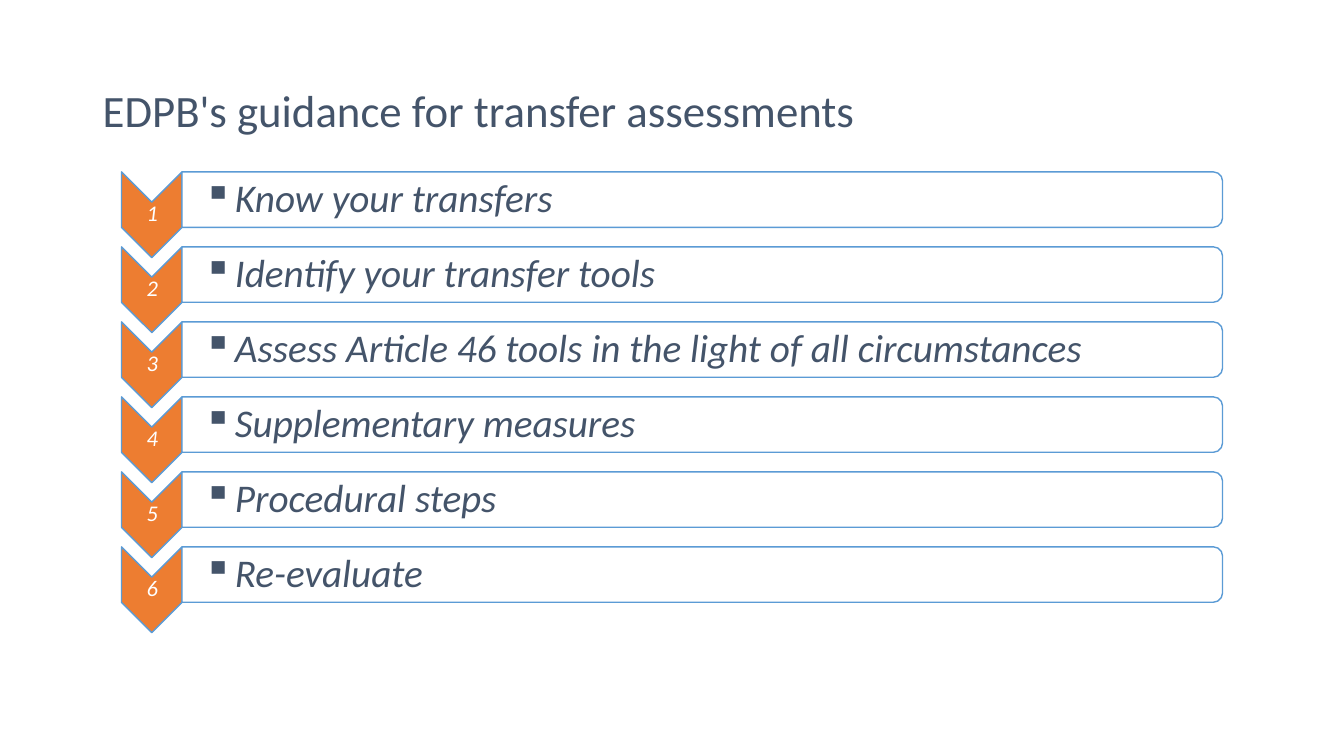
from lxml.etree import SubElement
from pptx import Presentation
from pptx.dml.color import RGBColor
from pptx.enum.shapes import MSO_SHAPE
from pptx.enum.text import MSO_ANCHOR, PP_ALIGN
from pptx.oxml.ns import qn
from pptx.util import Inches, Pt

HUES = {"ink": "44546A", "step": "ED7D31", "edge": "5B9BD5", "white": "FFFFFF"}
STEPS = [
    "Know your transfers",
    "Identify your transfer tools",
    "Assess Article 46 tools in the light of all circumstances",
    "Supplementary measures",
    "Procedural steps",
    "Re-evaluate",
]
PITCH = 3.72 / 5


class Deck:
    font = "Calibri"

    def __init__(self, slide):
        self.slide = slide

    def hue(self, name):
        return RGBColor.from_string(HUES[name])

    def shape(self, kind, box, fill, alpha=None):
        item = self.slide.shapes.add_shape(kind, *map(Inches, box))
        item.rotation = 90
        item.shadow.inherit = False
        item.fill.solid()
        item.fill.fore_color.rgb = self.hue(fill)
        item.line.color.rgb = self.hue("edge")
        item.line.width = Pt(1)
        if alpha:
            color = item.fill._xPr.find(qn("a:solidFill"))[0]
            SubElement(color, qn("a:alpha"), val=str(alpha * 1000))

    def text(self, words, box, size, color="ink", italic=True,
             align=PP_ALIGN.LEFT, inset=(0.1, 0.05, 0.1, 0.05)):
        frame = self.slide.shapes.add_textbox(*map(Inches, box)).text_frame
        frame.word_wrap = True
        frame.vertical_anchor = MSO_ANCHOR.MIDDLE
        (frame.margin_left, frame.margin_top,
         frame.margin_right, frame.margin_bottom) = map(Inches, inset)
        para = frame.paragraphs[0]
        para.text = words
        para.alignment = align
        para.line_spacing = 0.9
        para.font.name = self.font
        para.font.size = Pt(size)
        para.font.italic = italic
        para.font.color.rgb = self.hue(color)
        return para

    def bullet(self, words, box):
        para = self.text(words, box, 28, inset=(0.22, 0.02, 0.02, 0.02))
        props = para._p.get_or_add_pPr()
        props.set("marL", str(Inches(0.31)))
        props.set("indent", str(Inches(-0.31)))
        SubElement(props, qn("a:buChar"), char="▪")

    def step(self, index, words):
        drop = index * PITCH
        self.shape(MSO_SHAPE.CHEVRON, (1.08, 1.83 + drop, 0.85, 0.6), "step")
        self.text(str(index + 1), (1.21, 2 + drop, 0.6, 0.26), 16, "white",
                  align=PP_ALIGN.CENTER, inset=(0.01,) * 4)
        self.shape(MSO_SHAPE.ROUND_2_SAME_RECTANGLE,
                   (6.69, -3.18 + drop, 0.55, 10.32), "white", 90)
        self.bullet(words, (1.8, 1.73 + drop, 10.29, 0.5))


def main():
    show = Presentation()
    show.slide_width = Inches(13.33)
    show.slide_height = Inches(7.5)
    deck = Deck(show.slides.add_slide(show.slide_layouts[6]))
    deck.text("EDPB's guidance for transfer assessments",
              (0.92, 0.4, 11.5, 1.45), 32, italic=False)
    for index, words in enumerate(STEPS):
        deck.step(index, words)
    show.save("out.pptx")


if __name__ == "__main__":
    main()
